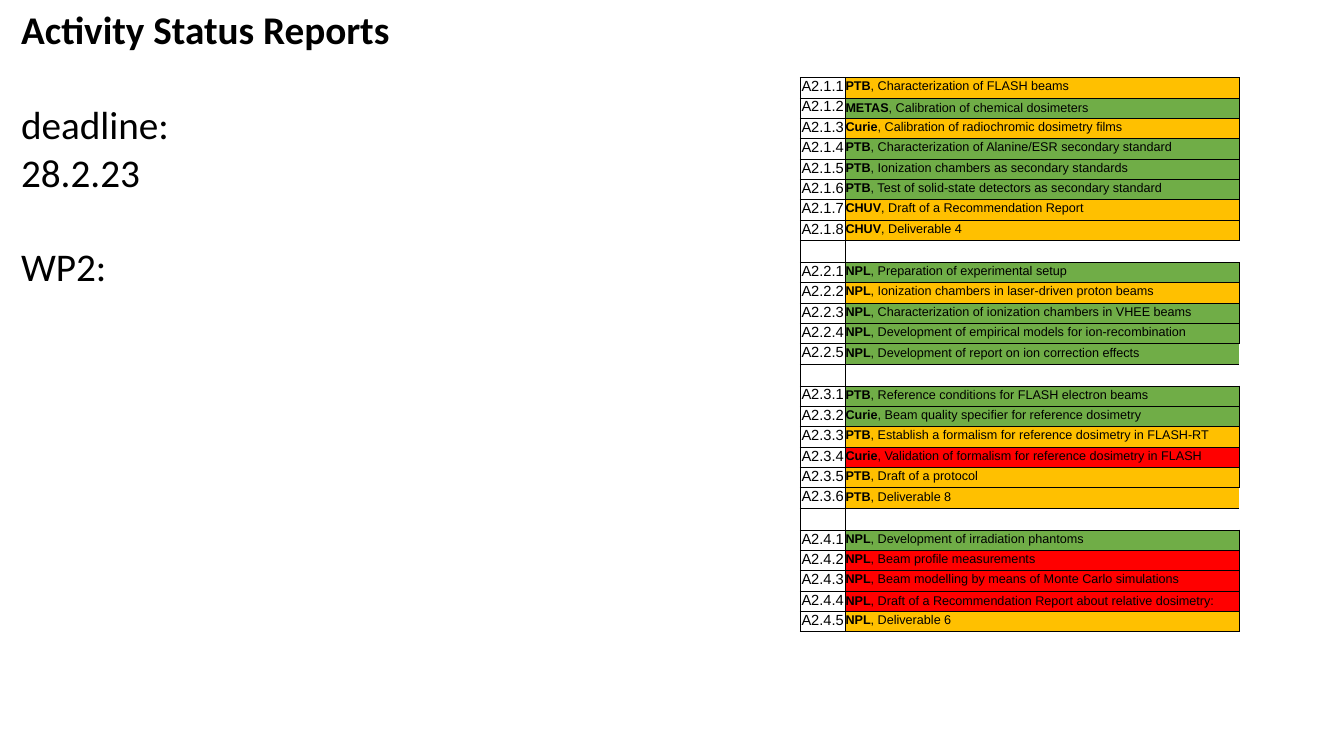
from dataclasses import dataclass

from lxml import etree
from pptx import Presentation
from pptx import util as u
from pptx.dml.color import RGBColor
from pptx.enum import text as t
from pptx.oxml.ns import qn

BLACK = RGBColor(0x00, 0x00, 0x00)
GREEN = RGBColor(0x70, 0xAD, 0x47)
AMBER = RGBColor(0xFF, 0xC0, 0x00)
RED = RGBColor(0xFF, 0x00, 0x00)

SLIDE_WIDTH, SLIDE_HEIGHT = u.Inches(13.33), u.Inches(7.5)
THIN, THICK = 0.5, 1.0
TITLE_SIZE = 28


def across(percent: float) -> int:
    """Share of the slide width."""
    return round(SLIDE_WIDTH * percent / 100)


def down(percent: float) -> int:
    """Share of the slide height."""
    return round(SLIDE_HEIGHT * percent / 100)


@dataclass(frozen=True)
class Activity:
    partner: str
    task: str
    status: RGBColor
    open_right: bool = False  # no border on the right
    low: bool = False  # left-aligned text at the bottom of the cell


# Activities by task group: the codes A2.1.1, A2.1.2 ... follow from the order
TASKS = [
    [
        Activity("PTB", "Characterization of FLASH beams", AMBER),
        Activity("METAS", "Calibration of chemical dosimeters", GREEN, low=True),
        Activity("Curie", "Calibration of radiochromic dosimetry films", AMBER),
        Activity("PTB", "Characterization of Alanine/ESR secondary standard", GREEN),
        Activity("PTB", "Ionization chambers as secondary standards", GREEN),
        Activity("PTB", "Test of solid-state detectors as secondary standard", GREEN),
        Activity("CHUV", "Draft of a Recommendation Report", AMBER),
        Activity("CHUV", "Deliverable 4", AMBER),
    ],
    [
        Activity("NPL", "Preparation of experimental setup", GREEN),
        Activity("NPL", "Ionization chambers in laser-driven proton beams", AMBER),
        Activity("NPL", "Characterization of ionization chambers in VHEE beams", GREEN),
        Activity("NPL", "Development of empirical models for ion-recombination", GREEN),
        Activity("NPL", "Development of report on ion correction effects", GREEN, open_right=True),
    ],
    [
        Activity("PTB", "Reference conditions for FLASH electron beams", GREEN),
        Activity("Curie", "Beam quality specifier for reference dosimetry", GREEN),
        Activity("PTB", "Establish a formalism for reference dosimetry in FLASH-RT", AMBER),
        Activity("Curie", "Validation of formalism for reference dosimetry in FLASH", RED),
        Activity("PTB", "Draft of a protocol", AMBER),
        Activity("PTB", "Deliverable 8", AMBER, open_right=True),
    ],
    [
        Activity("NPL", "Development of irradiation phantoms", GREEN),
        Activity("NPL", "Beam profile measurements", RED),
        Activity("NPL", "Beam modelling by means of Monte Carlo simulations", RED),
        Activity("NPL", "Draft of a Recommendation Report about relative dosimetry:", RED, low=True),
        Activity("NPL", "Deliverable 6", AMBER),
    ],
]


def write(para, words: str, *, size: float, font: str, bold: bool = False,
          align=t.PP_ALIGN.LEFT, before: float = 0) -> None:
    """Add a formatted span to a paragraph."""
    para.alignment = align
    para.line_spacing = 1.0
    para.space_before = u.Pt(before)
    span = para.add_run()
    span.text = words
    span.font.size = u.Pt(size)
    span.font.name = font
    span.font.bold = bold
    span.font.color.rgb = BLACK


def set_borders(cell, *, left: float = THIN, right: float = THIN,
                top: float = THIN, bottom: float = THIN) -> None:
    """Draw the four cell borders; a width of zero leaves one out."""
    props = cell._tc.get_or_add_tcPr()
    for index, (side, width) in enumerate(
            {"lnL": left, "lnR": right, "lnT": top, "lnB": bottom}.items()):
        line = etree.Element(qn(f"a:{side}"), w=str(u.Pt(width)))
        if width:
            fill = etree.SubElement(line, qn("a:solidFill"))
            etree.SubElement(fill, qn("a:srgbClr"), val=str(BLACK))
        else:
            etree.SubElement(line, qn("a:noFill"))
        props.insert(index, line)


def prepare_cell(cell, *, anchor=t.MSO_ANCHOR.BOTTOM, color: RGBColor | None = None) -> None:
    """Set margins, anchor and fill."""
    cell.margin_left = cell.margin_right = cell.margin_top = u.Pt(0.5)
    cell.margin_bottom = u.Pt(2.4)
    cell.vertical_anchor = anchor
    if color is None:
        cell.fill.background()
    else:
        cell.fill.solid()
        cell.fill.fore_color.rgb = color


def fill_row(code_cell, task_cell, code: str, activity: Activity | None, last: bool) -> None:
    """Fill one table row; without an activity it is a gap between groups."""
    bottom = THICK if last else THIN
    prepare_cell(code_cell)
    set_borders(code_cell, left=THICK, bottom=bottom)
    if activity is None:
        prepare_cell(task_cell)
        set_borders(task_cell, right=0)
        for cell in (code_cell, task_cell):
            cell.text_frame.paragraphs[0].font.size = u.Pt(10.5)
        return
    write(code_cell.text_frame.paragraphs[0], code, size=10.5, font="Arial",
          align=t.PP_ALIGN.CENTER)
    anchor = t.MSO_ANCHOR.BOTTOM if activity.low else t.MSO_ANCHOR.MIDDLE
    align = t.PP_ALIGN.LEFT if activity.low else t.PP_ALIGN.JUSTIFY
    prepare_cell(task_cell, anchor=anchor, color=activity.status)
    set_borders(task_cell, right=0 if activity.open_right else THIN, bottom=bottom)
    para = task_cell.text_frame.paragraphs[0]
    write(para, activity.partner, size=9, font="Arial", bold=True, align=align)
    write(para, f", {activity.task}", size=9, font="Arial", align=align)


def add_status_table(page) -> None:
    """Add the activities, with an empty row between task groups."""
    rows: list[tuple[str, Activity | None]] = []
    for group, activities in enumerate(TASKS, 1):
        if rows:
            rows.append(("", None))
        rows += [(f"A2.{group}.{number}", activity)
                 for number, activity in enumerate(activities, 1)]

    widths = (across(3.3), across(29.33))
    row_height = down(2.4)
    table = page.shapes.add_table(len(rows), len(widths), across(59.56), down(10.27),
                                  sum(widths), row_height * len(rows)).table
    table.first_row = table.horz_banding = False
    for column, width in zip(table.columns, widths):
        column.width = width
    for index, (code, activity) in enumerate(rows):
        table.rows[index].height = row_height
        fill_row(table.cell(index, 0), table.cell(index, 1), code, activity,
                 index == len(rows) - 1)


def place(shape, *, top: float, height: float) -> None:
    """Put a text shape in the left column."""
    shape.left, shape.top = across(0.83), down(top)
    shape.width, shape.height = across(50), down(height)
    shape.text_frame.word_wrap = True
    shape.text_frame.auto_size = t.MSO_AUTO_SIZE.NONE
    shape.text_frame.vertical_anchor = t.MSO_ANCHOR.TOP


def main() -> None:
    deck = Presentation()
    deck.slide_width, deck.slide_height = SLIDE_WIDTH, SLIDE_HEIGHT
    page = deck.slides.add_slide(deck.slide_layouts.get_by_name("Title Only"))

    # Title
    title = page.shapes.title
    place(title, top=0, height=7.6)
    write(title.text_frame.paragraphs[0], "Activity Status Reports",
          size=TITLE_SIZE, font="Calibri", bold=True)

    add_status_table(page)

    # Deadline and work package
    box = page.shapes.add_textbox(0, 0, 0, 0)
    place(box, top=12.67, height=26.4)
    frame = box.text_frame
    write(frame.paragraphs[0], "deadline:", size=TITLE_SIZE, font="Calibri")
    write(frame.add_paragraph(), "28.2.23", size=TITLE_SIZE, font="Calibri")
    write(frame.add_paragraph(), "WP2:", size=TITLE_SIZE, font="Calibri", before=34)

    deck.save("out.pptx")


if __name__ == "__main__":
    main()
